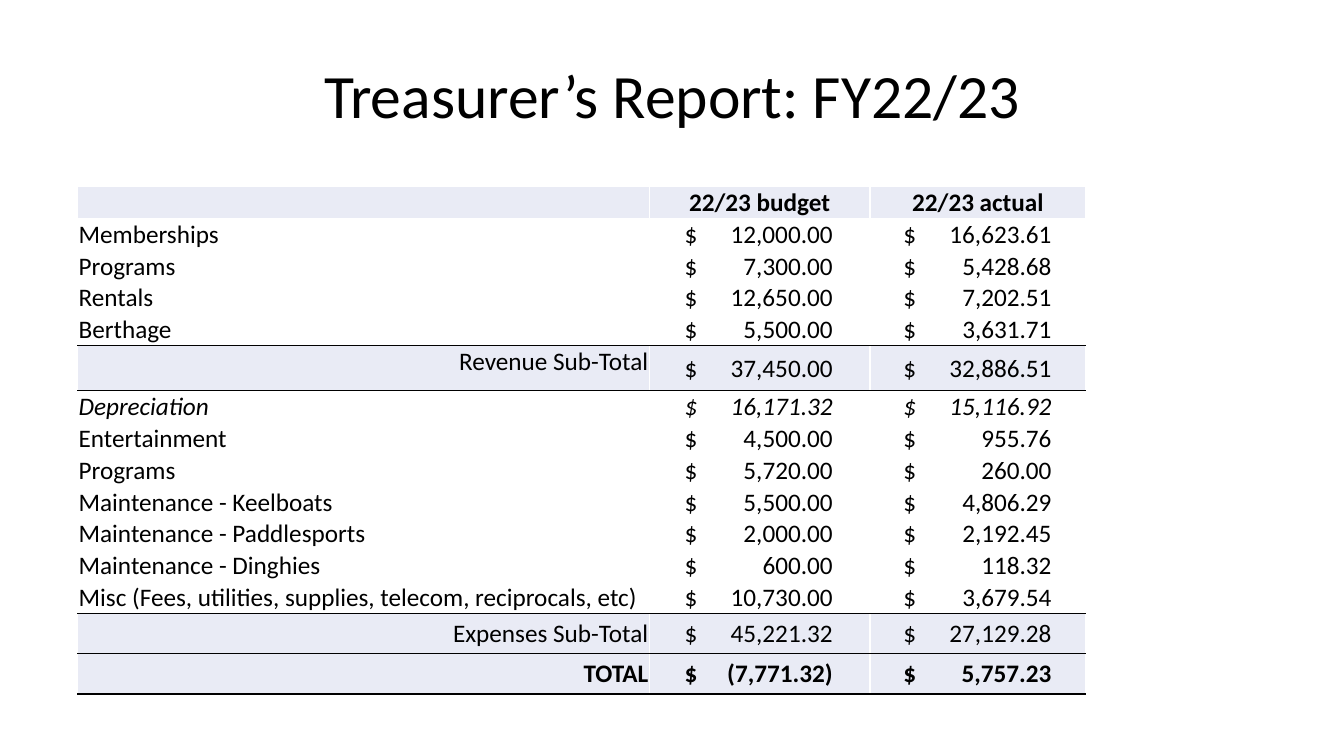
"""Build the treasurer's report slide with its budget table."""
from dataclasses import dataclass

from lxml import etree
from pptx import Presentation
from pptx import util as u
from pptx.dml.color import RGBColor
from pptx.enum import text as t
from pptx.oxml import ns


@dataclass(frozen=True)
class Theme:
    font: str = "Calibri"
    ink: str = "000000"
    band: str = "E9EBF5"
    rule: str = "FFFFFF"
    head: int = 44
    body: int = 18


@dataclass(frozen=True)
class Row:
    label: str
    plan: str
    real: str
    high: float = 0.28
    total: bool = False
    bold: bool = False
    slant: bool = False
    top: bool = False


LOOK = Theme()
MID, TOP, LOW = t.MSO_ANCHOR.MIDDLE, t.MSO_ANCHOR.TOP, t.MSO_ANCHOR.BOTTOM
LEFT, MIDST, RIGHT = t.PP_ALIGN.LEFT, t.PP_ALIGN.CENTER, t.PP_ALIGN.RIGHT
COLS = (5.67, 2.19, 2.14)
PADS = (0.01, 0.35, 0.33)
STOP = 1.47
HEADS = ("", "22/23 budget", "22/23 actual")
ROWS = (
    Row("Memberships", "12,000.00", "16,623.61"),
    Row("Programs", "7,300.00", "5,428.68"),
    Row("Rentals", "12,650.00", "7,202.51", high=0.26),
    Row("Berthage", "5,500.00", "3,631.71"),
    Row("Revenue Sub-Total", "37,450.00", "32,886.51", high=0.45, total=True, top=True),
    Row("Depreciation", "16,171.32", "15,116.92", slant=True),
    Row("Entertainment", "4,500.00", "955.76"),
    Row("Programs", "5,720.00", "260.00"),
    Row("Maintenance - Keelboats", "5,500.00", "4,806.29"),
    Row("Maintenance - Paddlesports", "2,000.00", "2,192.45"),
    Row("Maintenance - Dinghies", "600.00", "118.32"),
    Row("Misc (Fees, utilities, supplies, telecom, reciprocals, etc)", "10,730.00", "3,679.54"),
    Row("Expenses Sub-Total", "45,221.32", "27,129.28", high=0.4, total=True),
    Row("TOTAL", "(7,771.32)", "5,757.23", high=0.4, total=True, bold=True),
)


def write(frame, words: str, *, size: int = LOOK.body, align=LEFT, bold: bool = False,
          slant: bool = False, space: float = 1.0, stop: float = 0) -> None:
    para = frame.paragraphs[0]
    para.alignment = align
    para.line_spacing = space
    if stop:
        tabs = etree.SubElement(para._p.get_or_add_pPr(), ns.qn("a:tabLst"))
        etree.SubElement(tabs, ns.qn("a:tab"), pos=str(u.Inches(stop)), algn="r")
    run = para.add_run()
    run.text = words
    font = run.font
    font.name, font.size, font.bold, font.italic = LOOK.font, u.Pt(size), bold, slant
    font.color.rgb = RGBColor.from_string(LOOK.ink)


def edge(cell, side: str, tint: str) -> None:
    line = etree.SubElement(cell._tc.get_or_add_tcPr(), ns.qn(f"a:ln{side}"), w=str(u.Pt(1)))
    fill = etree.SubElement(line, ns.qn("a:solidFill"))
    etree.SubElement(fill, ns.qn("a:srgbClr"), val=tint)


def dress(cell, pad: float, anchor, shade: bool, over: bool, under: bool) -> None:
    cell.margin_left = u.Inches(pad)
    cell.margin_right = cell.margin_top = u.Inches(0.01)
    cell.margin_bottom = 0
    cell.vertical_anchor = anchor
    for side, dark in (("L", False), ("R", False), ("T", over), ("B", under)):
        edge(cell, side, LOOK.ink if dark else LOOK.rule)
    if shade:
        cell.fill.solid()
        cell.fill.fore_color.rgb = RGBColor.from_string(LOOK.band)
    else:
        cell.fill.background()


def fill_head(grid) -> None:
    grid.rows[0].height = u.Inches(0.23)
    for col, words in enumerate(HEADS):
        cell = grid.cell(0, col)
        dress(cell, 0.01, LOW, True, False, False)
        write(cell.text_frame, words, align=MIDST, bold=True)


def fill_row(grid, num: int, row: Row, over: bool, under: bool) -> None:
    grid.rows[num].height = u.Inches(row.high)
    for col, words in enumerate((row.label, f"$\t{row.plan}", f"$\t{row.real}")):
        cell = grid.cell(num, col)
        name = col == 0
        dress(cell, PADS[col], TOP if name and row.top else MID, row.total, over, under)
        write(cell.text_frame, words, align=RIGHT if name and row.total else LEFT,
              bold=row.bold, slant=row.slant, stop=0 if name else STOP)


def add_grid(slide) -> None:
    box = [u.Inches(n) for n in (0.77, 1.85, sum(COLS), 4.96)]
    grid = slide.shapes.add_table(len(ROWS) + 1, len(COLS), *box).table
    grid.first_row = grid.horz_banding = False
    for col, wide in zip(grid.columns, COLS):
        col.width = u.Inches(wide)
    fill_head(grid)
    sums = [False, *(row.total for row in ROWS), False]
    for num, row in enumerate(ROWS, 1):
        fill_row(grid, num, row, row.total or sums[num - 1], row.total or sums[num + 1])


def add_title(slide) -> None:
    head = slide.shapes.title
    head.left, head.top, head.width, head.height = (u.Inches(n) for n in (0.92, 0.23, 11.5, 1.49))
    head.text_frame.vertical_anchor = MID
    write(head.text_frame, "Treasurer’s Report: FY22/23", size=LOOK.head, align=MIDST, space=0.9)


def main() -> None:
    deck = Presentation()
    deck.slide_width, deck.slide_height = u.Inches(13.33), u.Inches(7.5)
    slide = deck.slides.add_slide(deck.slide_layouts[5])
    add_title(slide)
    add_grid(slide)
    deck.save("out.pptx")


if __name__ == "__main__":
    main()
